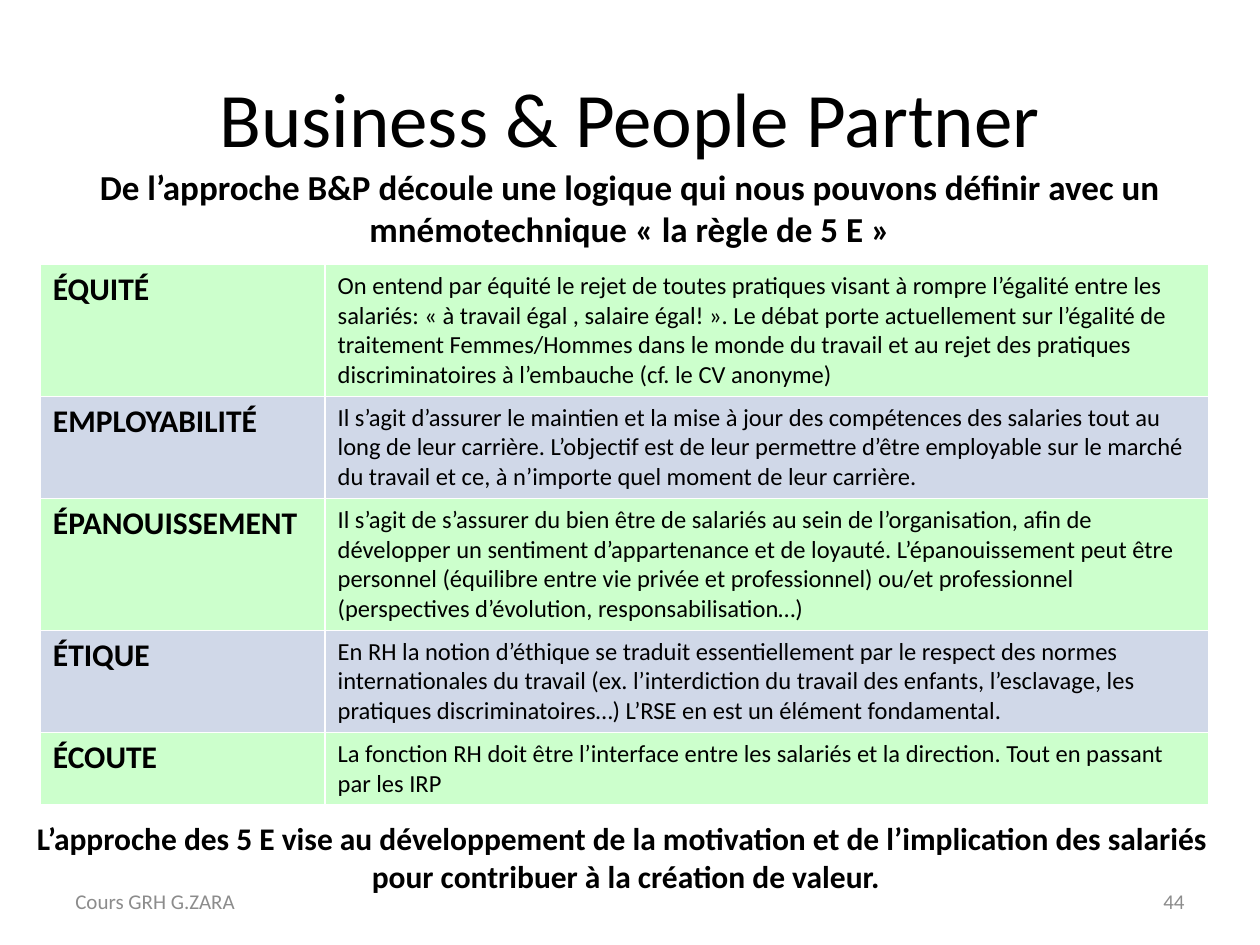
from pptx import Presentation
from pptx.dml.color import RGBColor
from pptx.enum.text import MSO_ANCHOR, MSO_AUTO_SIZE, PP_ALIGN
from pptx.util import Inches, Pt
from lxml.etree import SubElement
from pptx.oxml.ns import qn

# Content
TITLE = "Business & People Partner"
INTRODUCTION = ("De l’approche B&P découle une logique qui nous pouvons définir "
                "avec un mnémotechnique « la règle de 5 E »")
RULES = [  # name, explanation, row height
    ("ÉQUITÉ",
     "On entend par équité le rejet de toutes pratiques visant à rompre l’égalité "
     "entre les salariés: « à travail égal , salaire égal! ». Le débat porte "
     "actuellement sur l’égalité de traitement Femmes/Hommes dans le monde du travail "
     "et au rejet des pratiques discriminatoires à l’embauche (cf. le CV anonyme)", 1.04),
    ("EMPLOYABILITÉ",
     "Il s’agit d’assurer le maintien et la mise à jour des compétences des salaries "
     "tout au long de leur carrière. L’objectif est de leur permettre d’être employable "
     "sur le marché du travail et ce, à n’importe quel moment de leur carrière.", 0.8),
    ("ÉPANOUISSEMENT",
     "Il s’agit de s’assurer du bien être de salariés au sein de l’organisation, afin "
     "de développer un sentiment d’appartenance et de loyauté. L’épanouissement peut "
     "être personnel (équilibre entre vie privée et professionnel) ou/et professionnel "
     "(perspectives d’évolution, responsabilisation…)", 1.04),
    ("ÉTIQUE",
     "En RH la notion d’éthique se traduit essentiellement par le respect des normes "
     "internationales du travail (ex. l’interdiction du travail des enfants, "
     "l’esclavage, les pratiques discriminatoires…) L’RSE en est un élément "
     "fondamental.", 0.8),
    ("ÉCOUTE",
     "La fonction RH doit être l’interface entre les salariés et la direction. "
     "Tout en passant par les IRP", 0.55),
]
CONCLUSION = [
    "L’approche des 5 E vise au développement de la motivation et de l’implication des salariés",
    " pour contribuer à la création de valeur.",
]
FOOTERS = [  # text, left, alignment
    ("Cours GRH G.ZARA", 0.5, PP_ALIGN.LEFT),
    ("44", 7.17, PP_ALIGN.RIGHT),
]

# Style
FONT = "Calibri"
BLACK = RGBColor(0x00, 0x00, 0x00)
GRAY = RGBColor(0x8C, 0x8C, 0x8C)
ROW_FILLS = [RGBColor(0xCC, 0xFF, 0xCC), RGBColor(0xD0, 0xD8, 0xE8)]
COLUMN_WIDTHS = [2.26, 7.01]


def write(paragraph, text, size, bold=False, color=BLACK, alignment=PP_ALIGN.LEFT):
    paragraph.alignment = alignment
    run = paragraph.add_run()
    run.text = text
    run.font.name = FONT
    run.font.size = Pt(size)
    run.font.bold = bold
    run.font.color.rgb = color


def place(shape, left, top, width, height):
    shape.left, shape.top = Inches(left), Inches(top)
    shape.width, shape.height = Inches(width), Inches(height)


presentation = Presentation()
presentation.slide_width, presentation.slide_height = Inches(10), Inches(7.5)
slide = presentation.slides.add_slide(presentation.slide_layouts[1])

# Title and introduction
title, body = slide.placeholders
place(title, 0.5, 0.3, 9, 1.25)
title.text_frame.vertical_anchor = MSO_ANCHOR.MIDDLE
write(title.text_frame.paragraphs[0], TITLE, 44, alignment=PP_ALIGN.CENTER)

place(body, 0.5, 1.26, 9, 0.9)
body.text_frame.auto_size = MSO_AUTO_SIZE.NONE
introduction = body.text_frame.paragraphs[0]
write(introduction, INTRODUCTION, 20, bold=True, alignment=PP_ALIGN.CENTER)
introduction.space_before = Pt(4)
properties = introduction._p.get_or_add_pPr()
properties.set("marL", "0")
properties.set("indent", "0")
SubElement(properties, qn("a:buNone"))

# Table of the five rules; its built-in style draws the white borders
table = slide.shapes.add_table(
    len(RULES), len(COLUMN_WIDTHS), Inches(0.32), Inches(2.1),
    Inches(sum(COLUMN_WIDTHS)), Inches(sum(rule[2] for rule in RULES))).table
for column, width in zip(table.columns, COLUMN_WIDTHS):
    column.width = Inches(width)
for index, (name, explanation, height) in enumerate(RULES):
    row = table.rows[index]
    row.height = Inches(height)
    for cell, text, size, bold in zip(row.cells, (name, explanation), (18, 14), (True, False)):
        cell.fill.solid()
        cell.fill.fore_color.rgb = ROW_FILLS[index % 2]
        write(cell.text_frame.paragraphs[0], text, size, bold)

# Conclusion
frame = slide.shapes.add_textbox(Inches(0.12), Inches(6.45), Inches(9.64), Inches(0.71)).text_frame
frame.word_wrap = False
frame.auto_size = MSO_AUTO_SIZE.SHAPE_TO_FIT_TEXT
for index, line in enumerate(CONCLUSION):
    paragraph = frame.add_paragraph() if index else frame.paragraphs[0]
    write(paragraph, line, 18, bold=True, alignment=PP_ALIGN.CENTER)

# Footer and slide number
for text, left, alignment in FOOTERS:
    frame = slide.shapes.add_textbox(Inches(left), Inches(6.95), Inches(2.33), Inches(0.4)).text_frame
    frame.word_wrap = True
    frame.vertical_anchor = MSO_ANCHOR.MIDDLE
    write(frame.paragraphs[0], text, 12, color=GRAY, alignment=alignment)

presentation.save("out.pptx")
